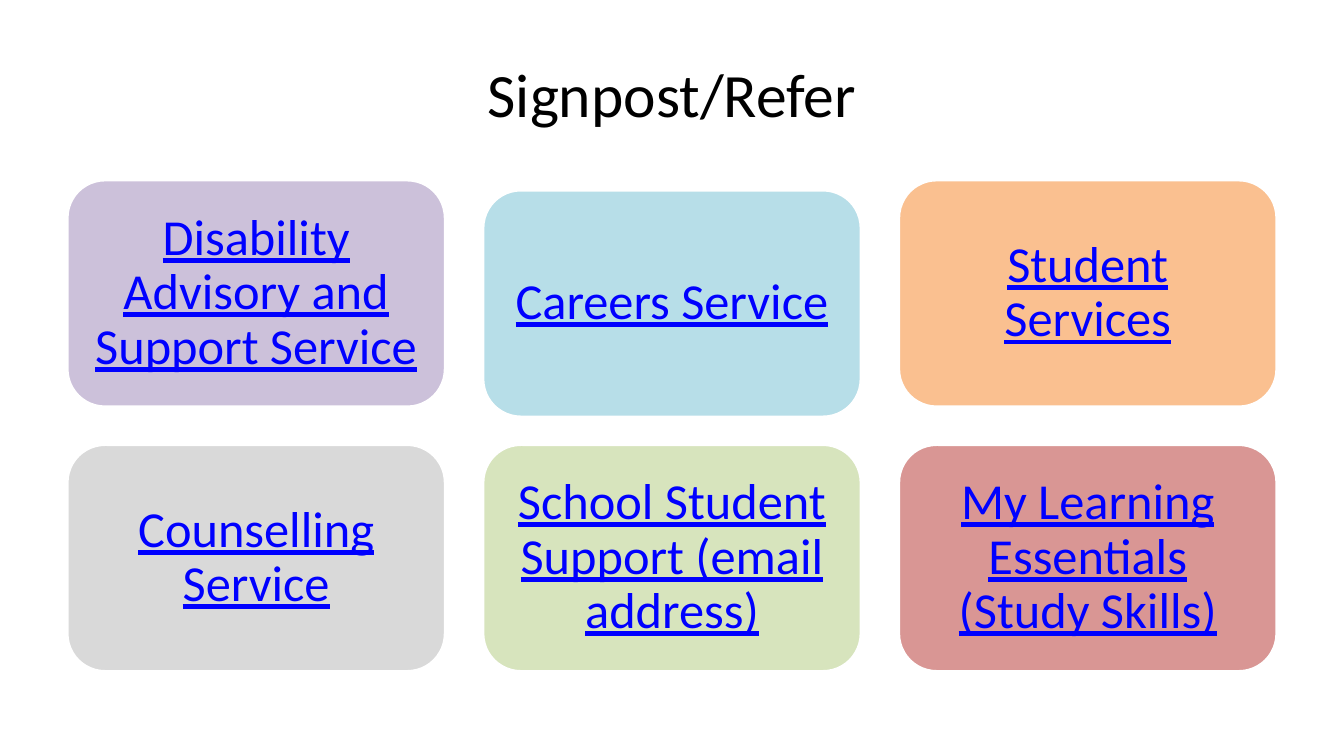
import dataclasses

import pptx
import pptx.dml.color
import pptx.enum.shapes
import pptx.enum.text
import pptx.slide
import pptx.util

Pt = pptx.util.Pt
RGBColor = pptx.dml.color.RGBColor

BLACK = RGBColor(0x00, 0x00, 0x00)
WHITE = RGBColor(0xFF, 0xFF, 0xFF)
LINK_BLUE = RGBColor(0x00, 0x00, 0xFF)
LILAC = RGBColor(0xCC, 0xC1, 0xDA)
AQUA = RGBColor(0xB7, 0xDE, 0xE8)
ORANGE = RGBColor(0xFA, 0xC0, 0x90)
GREY = RGBColor(0xD9, 0xD9, 0xD9)
GREEN = RGBColor(0xD7, 0xE4, 0xBD)
ROSE = RGBColor(0xD9, 0x96, 0x94)

FONT = "Calibri"
COLUMNS = 3
GRID_LEFT, GRID_TOP = 48, 128.6
CARD_WIDTH, CARD_HEIGHT = 270, 162
COLUMN_GAP, ROW_GAP = 27, 27
CARD_INSET = 10.8


@dataclasses.dataclass(frozen=True)
class Service:
    name: str
    fill: RGBColor
    drop: float = 0


SERVICES = [
    Service("Disability Advisory and Support Service", LILAC),
    Service("Careers Service", AQUA, drop=7.2),
    Service("Student Services", ORANGE),
    Service("Counselling Service", GREY),
    Service("School Student Support (email address)", GREEN),
    Service("My Learning Essentials (Study Skills)", ROSE),
]


def write_centred(
    frame: pptx.text.text.TextFrame, text: str, size: float, color: RGBColor
) -> pptx.text.text._Paragraph:
    frame.word_wrap = True
    frame.vertical_anchor = pptx.enum.text.MSO_ANCHOR.MIDDLE
    frame.text = text
    para = frame.paragraphs[0]
    para.alignment = pptx.enum.text.PP_ALIGN.CENTER
    para.font.name = FONT
    para.font.size = Pt(size)
    para.font.color.rgb = color
    return para


def draw_title(page: pptx.slide.Slide, text: str) -> None:
    title = page.shapes.title
    title.left, title.top = Pt(48), Pt(21.6)
    title.width, title.height = Pt(864), Pt(90)
    write_centred(title.text_frame, text, 44, BLACK)


def draw_service(page: pptx.slide.Slide, service: Service, index: int) -> None:
    row, column = divmod(index, COLUMNS)
    card = page.shapes.add_shape(
        pptx.enum.shapes.MSO_SHAPE.ROUNDED_RECTANGLE,
        Pt(GRID_LEFT + column * (CARD_WIDTH + COLUMN_GAP)),
        Pt(GRID_TOP + row * (CARD_HEIGHT + ROW_GAP) + service.drop),
        Pt(CARD_WIDTH),
        Pt(CARD_HEIGHT),
    )
    card.shadow.inherit = False
    card.fill.solid()
    card.fill.fore_color.rgb = service.fill
    card.line.color.rgb = WHITE
    card.line.width = Pt(2)
    frame = card.text_frame
    frame.margin_left = frame.margin_right = Pt(CARD_INSET)
    frame.margin_top = frame.margin_bottom = Pt(CARD_INSET)
    para = write_centred(frame, service.name, 36, LINK_BLUE)
    para.line_spacing = 0.9
    para.font.underline = True


def main() -> None:
    deck = pptx.Presentation()
    deck.slide_width, deck.slide_height = Pt(960), Pt(540)
    page = deck.slides.add_slide(deck.slide_layouts.get_by_name("Title Only"))
    draw_title(page, "Signpost/Refer")
    for index, service in enumerate(SERVICES):
        draw_service(page, service, index)
    deck.save("out.pptx")


if __name__ == "__main__":
    main()
